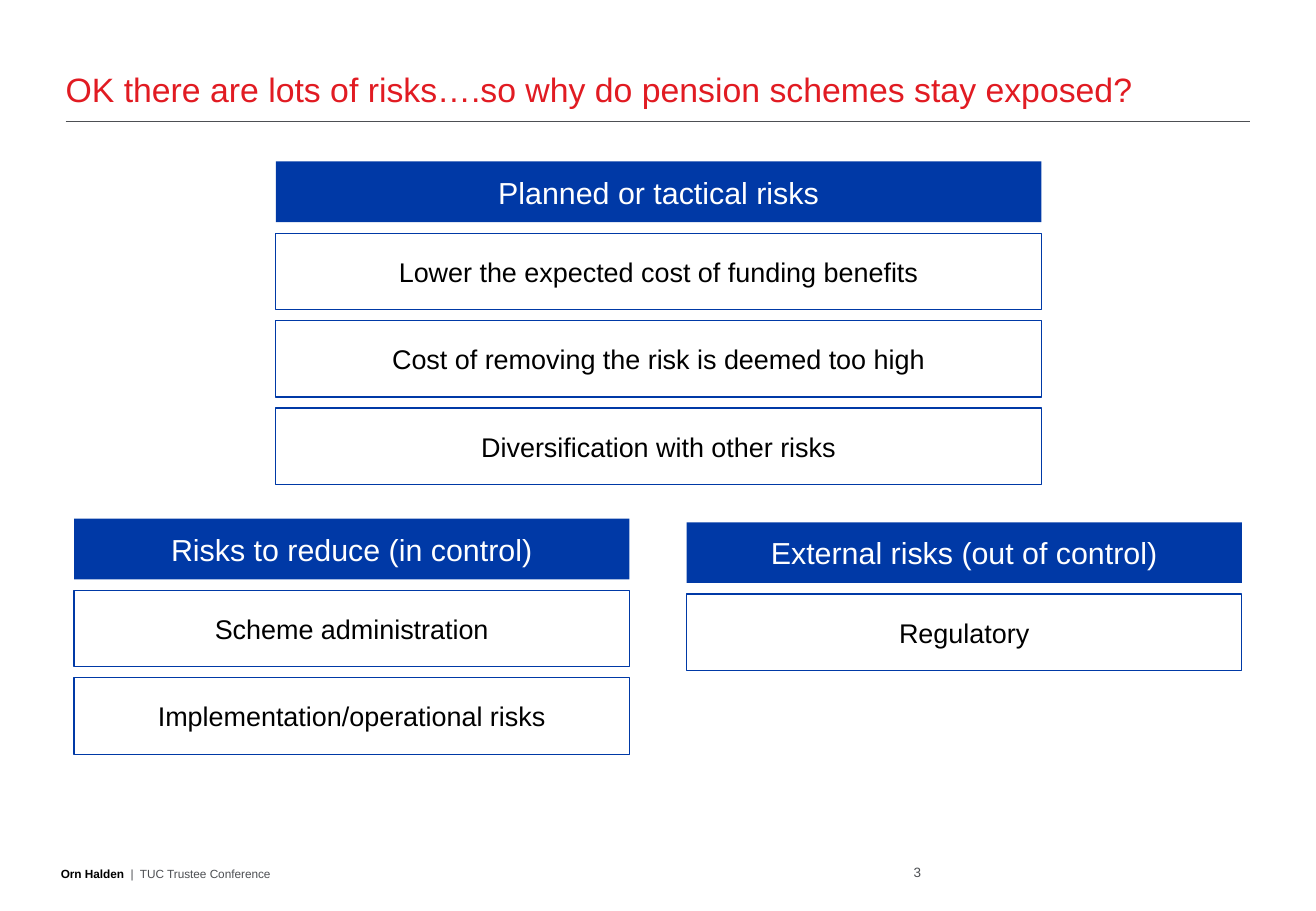
from pptx import Presentation
from pptx.dml.color import RGBColor
from pptx.enum.shapes import MSO_CONNECTOR, MSO_SHAPE
from pptx.enum.text import MSO_ANCHOR, PP_ALIGN
from pptx.oxml.ns import qn
from pptx.util import Inches, Pt

LEFT, CENTER, RIGHT = PP_ALIGN.LEFT, PP_ALIGN.CENTER, PP_ALIGN.RIGHT
MIDDLE, BOTTOM = MSO_ANCHOR.MIDDLE, MSO_ANCHOR.BOTTOM
RECTANGLE, STRAIGHT = MSO_SHAPE.RECTANGLE, MSO_CONNECTOR.STRAIGHT

COLORS = {
    "red": "E11B22",
    "blue": "0039A6",
    "grey": "4D4F53",
    "black": "000000",
    "white": "FFFFFF",
}
FONT = "Arial"
HEADER_HEIGHT, BOX_HEIGHT = 0.5, 0.63
FIRST_BOX_OFFSET, BOX_PITCH = 0.59, 0.72


class RiskSlide:
    def __init__(self, slide):
        self.shapes = slide.shapes

    def color(self, name):
        return RGBColor.from_string(COLORS[name])

    def fill_text(self, frame, runs, size, align, anchor):
        """Put (text, color, bold) runs into one paragraph."""
        frame.word_wrap = True
        frame.vertical_anchor = anchor
        paragraph = frame.paragraphs[0]
        paragraph.alignment = align
        for text, color, bold in runs:
            run = paragraph.add_run()
            run.text = text
            run.font.name = FONT
            run.font.size = Pt(size)
            run.font.bold = bold
            run.font.color.rgb = self.color(color)

    def text(self, left, top, width, height, runs, size, align=LEFT):
        frame = self.shapes.add_textbox(
            Inches(left), Inches(top), Inches(width), Inches(height)).text_frame
        frame.margin_left = frame.margin_right = 0
        frame.margin_top = frame.margin_bottom = 0
        self.fill_text(frame, runs, size, align, BOTTOM)

    def rule(self, left, right, y):
        rule = self.shapes.add_connector(
            STRAIGHT, Inches(left), Inches(y), Inches(right), Inches(y))
        rule.line.color.rgb = self.color("grey")
        rule.line.width = Pt(0.75)
        properties = rule._element.spPr
        properties.append(properties.makeelement(qn("a:effectLst"), {}))

    def box(self, left, top, width, height, text, size, fill, color, outline=None):
        box = self.shapes.add_shape(
            RECTANGLE, Inches(left), Inches(top), Inches(width), Inches(height))
        box.shadow.inherit = False
        box.fill.solid()
        box.fill.fore_color.rgb = self.color(fill)
        if outline:
            box.line.color.rgb = self.color(outline)
            box.line.width = Pt(0.75)
        else:
            box.line.fill.background()
        self.fill_text(box.text_frame, [(text, color, False)], size, CENTER, MIDDLE)

    def risk_group(self, left, top, width, heading, risks):
        self.box(left, top, width, HEADER_HEIGHT, heading, 18, "blue", "white")
        for row, risk in enumerate(risks):
            self.box(left, top + FIRST_BOX_OFFSET + row * BOX_PITCH, width,
                     BOX_HEIGHT, risk, 16, "white", "black", "blue")


def main():
    presentation = Presentation()
    presentation.slide_width = Inches(10.83)
    presentation.slide_height = Inches(7.5)
    slide = RiskSlide(presentation.slides.add_slide(presentation.slide_layouts[6]))

    # Title and rule
    title = "OK there are lots of risks….so why do pension schemes stay exposed?"
    slide.text(0.54, 0.33, 9.75, 0.57, [(title, "red", False)], 20)
    slide.rule(0.54, 10.29, 1)

    # Risk groups
    slide.risk_group(2.27, 1.33, 6.3, "Planned or tactical risks", [
        "Lower the expected cost of funding benefits",
        "Cost of removing the risk is deemed too high",
        "Diversification with other risks",
    ])
    slide.risk_group(0.61, 4.27, 4.57, "Risks to reduce (in control)", [
        "Scheme administration",
        "Implementation/operational risks",
    ])
    slide.risk_group(5.65, 4.3, 4.57, "External risks (out of control)", [
        "Regulatory",
    ])

    # Footer
    slide.text(0.5, 6.92, 4.98, 0.33, [
        ("Orn Halden", "black", True),
        ("  |  TUC Trustee Conference", "grey", False),
    ], 7)
    slide.text(7.23, 6.92, 0.35, 0.33, [("3", "grey", False)], 8, RIGHT)

    presentation.save("out.pptx")


if __name__ == "__main__":
    main()
